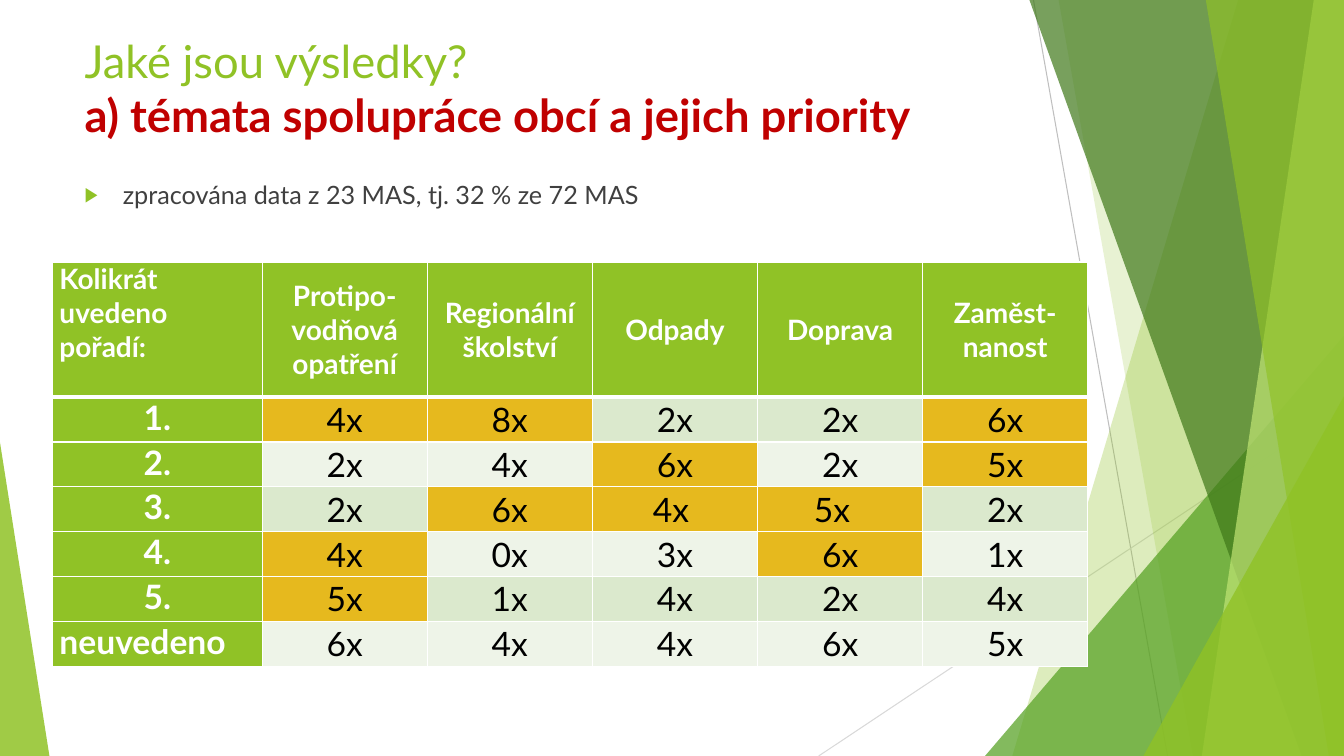
from collections import namedtuple

from lxml.etree import SubElement
from pptx import Presentation
from pptx.dml.color import RGBColor
from pptx.enum.shapes import MSO_CONNECTOR as Connector, MSO_SHAPE as Shape
from pptx.enum.text import MSO_ANCHOR as Anchor, PP_ALIGN as Align
from pptx.oxml.ns import qn
from pptx.util import Inches, Pt

Box = namedtuple("Box", "left top width height")

FONT = "Lato"
COLORS = {
    "green": "90C226", "leaf": "54A021", "forest": "3F7819", "lime": "C0E474",
    "red": "C00000", "text": "404040", "black": "000000", "white": "FFFFFF",
    "gold": "E6B91E", "band_dark": "DBE9CD", "band_light": "EEF4E8",
    "line_dark": "BFBFBF", "line_light": "D9D9D9",
}
RAYS = [((10.25, 0), (11.58, 7.5), "line_dark"), ((13.33, 4.03), (8.12, 7.5), "line_light")]
FACETS = [
    ("band", 12.28, 10.04, "green", 30),
    ("band", 10.5, 11.83, "green", 20),
    ("triangle", 9.77, 3.33, "leaf", 72),
    ("band", 10.21, 12.91, "forest", 70),
    ("band", 13.03, 11.92, "lime", 70),
    ("band", 11.96, 13.18, "green", 65),
    ("triangle", 11.34, 3.93, "green", 80),
]
HEADER = ["Kolikrát uvedeno pořadí:", "Protipo-vodňová opatření", "Regionální školství",
          "Odpady", "Doprava", "Zaměst-nanost"]
RANKS = [
    ["1.", "4x", "8x", "2x", "2x", "6x"],
    ["2.", "2x", "4x", "6x", "2x", "5x"],
    ["3.", "2x", "6x", "4x", "5x", "2x"],
    ["4.", "4x", "0x", "3x", "6x", "1x"],
    ["5.", "5x", "1x", "4x", "2x", "4x"],
    ["neuvedeno", "6x", "4x", "4x", "6x", "5x"],
]
HIGHLIGHTS = {(1, 1), (1, 2), (1, 5), (2, 3), (2, 5), (3, 2), (3, 3), (3, 4), (4, 1), (4, 4), (5, 1)}
EXTRA_RIGHT_MARGIN = {(3, 3): 0.08, (3, 4): 0.16}


def color(name):
    """Return the named colour."""
    return RGBColor.from_string(COLORS[name])


def style_span(span, size, shade, bold=False):
    """Set the font of one run."""
    span.font.name = FONT
    span.font.size = Pt(size)
    span.font.bold = bold
    span.font.color.rgb = color(shade)


def paint(shape, shade, opacity):
    """Give a shape a translucent fill without outline or shadow."""
    shape.shadow.inherit = False
    shape.line.fill.background()
    shape.fill.solid()
    shape.fill.fore_color.rgb = color(shade)
    tint = shape.fill._xPr.find(qn("a:solidFill"))[0]
    SubElement(tint, qn("a:alpha"), val=str(opacity * 1000))


def add_ray(page, box, start, end, shade):
    """Draw a thin line between two points of the box."""
    points = [Inches(value) for x, y in (start, end) for value in (box.left + x, box.top + y)]
    ray = page.shapes.add_connector(Connector.STRAIGHT, *points)
    ray.line.color.rgb = color(shade)
    ray.line.width = Pt(0.75)
    SubElement(ray._element.spPr, qn("a:effectLst"))


def add_band(page, box, top_x, bottom_x):
    """Draw a full-height band that reaches the right edge of the box."""
    right, bottom = box.left + box.width, box.top + box.height
    corners = [(box.left + top_x, box.top), (right, box.top),
               (right, bottom), (box.left + bottom_x, bottom)]
    points = [(Inches(x), Inches(y)) for x, y in corners]
    builder = page.shapes.build_freeform(*points[0])
    builder.add_line_segments(points[1:], close=True)
    return builder.convert_to_shape()


def add_triangle(page, box, apex):
    """Draw a triangle that fills the box, with its apex at 0 (left) or 1 (right)."""
    triangle = page.shapes.add_shape(Shape.ISOSCELES_TRIANGLE, *map(Inches, box))
    triangle.adjustments[0] = apex
    return triangle


def add_backdrop(page, box):
    """Draw the thin lines and the green facets at the edges of the box."""
    for start, end, shade in RAYS:
        add_ray(page, box, start, end, shade)
    for kind, first, second, shade, opacity in FACETS:
        if kind == "band":
            facet = add_band(page, box, first, second)
        else:
            corner = Box(box.left + first, box.top + second, box.width - first, box.height - second)
            facet = add_triangle(page, corner, 1)
        paint(facet, shade, opacity)
    left_corner = Box(box.left, box.top + box.height - 3.11, 0.49, 3.11)
    paint(add_triangle(page, left_corner, 0), "green", 85)


def add_title(page, box):
    """Write the two-line title."""
    frame = page.shapes.add_textbox(*map(Inches, box)).text_frame
    frame.word_wrap = True
    para = frame.paragraphs[0]
    para.text = "Jaké jsou výsledky?\va) témata spolupráce obcí a jejich priority"
    question, topic = para.runs
    style_span(question, 32.4, "green")
    style_span(topic, 32.4, "red", bold=True)


def add_body(page, box):
    """Write the bulleted statement."""
    frame = page.shapes.add_textbox(*map(Inches, box)).text_frame
    frame.word_wrap = True
    para = frame.paragraphs[0]
    para.text = "zpracována data z 23 MAS, tj. 32 % ze 72 MAS"
    para.space_before = Pt(10)
    style_span(para.runs[0], 18, "text")
    props = para._p.get_or_add_pPr()
    props.set("marL", str(Inches(0.38)))
    props.set("indent", str(-Inches(0.38)))
    SubElement(SubElement(props, qn("a:buClr")), qn("a:srgbClr"), val=COLORS["green"])
    SubElement(props, qn("a:buSzPct"), val="80000")
    SubElement(props, qn("a:buFont"), typeface="Arial")
    SubElement(props, qn("a:buChar"), char="▶")


def add_borders(cell, row):
    """Draw white cell borders, thick between header and body."""
    widths = {"lnL": 1, "lnR": 1, "lnT": 3 if row == 1 else 1, "lnB": 3 if row == 0 else 1}
    for side, width in widths.items():
        edge = SubElement(cell._tc.get_or_add_tcPr(), qn("a:" + side), w=str(Pt(width)))
        SubElement(SubElement(edge, qn("a:solidFill")), qn("a:srgbClr"), val=COLORS["white"])


def cell_shade(row, column):
    """Return the fill name of a table cell."""
    if row == 0 or column == 0:
        return "green"
    if (row, column) in HIGHLIGHTS:
        return "gold"
    return "band_dark" if row % 2 else "band_light"


def fill_cell(cell, row, column, text):
    """Write and format one table cell."""
    heading = row == 0 or column == 0
    add_borders(cell, row)
    cell.fill.solid()
    cell.fill.fore_color.rgb = color(cell_shade(row, column))
    cell.margin_left = Inches(0.07)
    cell.margin_right = Inches(0.07 + EXTRA_RIGHT_MARGIN.get((row, column), 0))
    cell.margin_top = cell.margin_bottom = 0
    cell.vertical_anchor = Anchor.MIDDLE if column else Anchor.TOP
    cell.text_frame.text = text
    para = cell.text_frame.paragraphs[0]
    para.alignment = Align.CENTER
    if column == 0 and row == 0:
        para.alignment = Align.LEFT
    elif column == 0 and row == len(RANKS):
        para.alignment = Align.JUSTIFY
    style_span(para.runs[0], 24 if row else 20, "white" if heading else "black", heading)


def add_ranking(page, box):
    """Build the table of how often each topic got each rank."""
    rows = [HEADER] + RANKS
    first_width, header_height = 2.08, 1.34
    table = page.shapes.add_table(len(rows), len(HEADER), *map(Inches, box)).table
    for index, column in enumerate(table.columns):
        rest = (box.width - first_width) / (len(HEADER) - 1)
        column.width = Inches(rest if index else first_width)
    for index, row in enumerate(table.rows):
        rest = (box.height - header_height) / len(RANKS)
        row.height = Inches(rest if index else header_height)
    for row, texts in enumerate(rows):
        for column, text in enumerate(texts):
            fill_cell(table.cell(row, column), row, column, text)


def main():
    """Build and save the deck."""
    deck = Presentation()
    deck.slide_width, deck.slide_height = Inches(13.33), Inches(7.5)
    page = deck.slides.add_slide(deck.slide_layouts[6])
    add_backdrop(page, Box(0, 0, 13.33, 7.5))
    add_title(page, Box(0.74, 0.28, 9.4, 1.44))
    add_body(page, Box(0.74, 1.73, 9.4, 0.6))
    add_ranking(page, Box(0.52, 2.6, 10.27, 4.01))
    deck.save("out.pptx")


if __name__ == "__main__":
    main()
